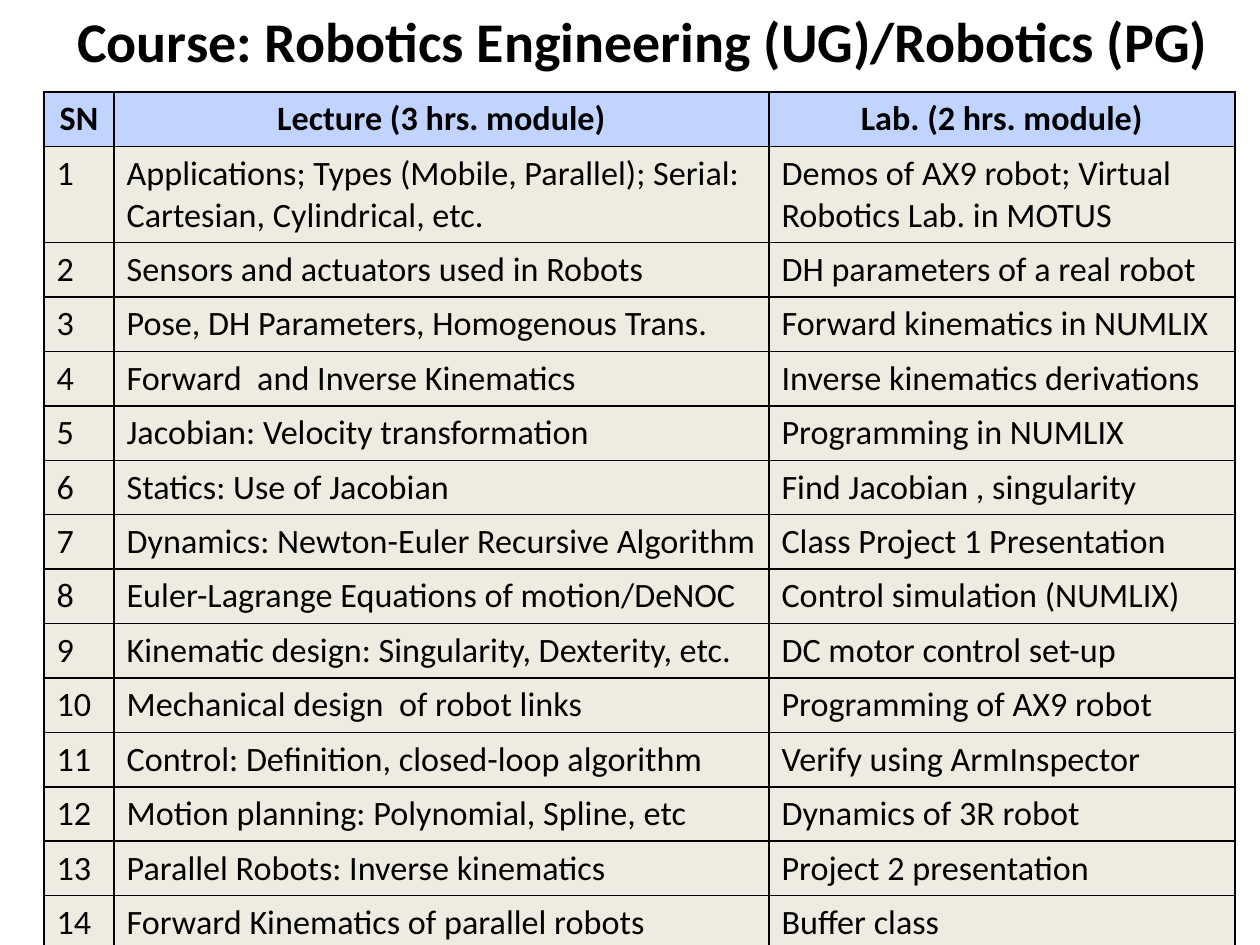
from dataclasses import dataclass

import lxml.etree
import pptx
import pptx.dml.color
import pptx.enum.text
import pptx.oxml.ns
import pptx.util

PX = pptx.util.Inches(1) / 126
PAGE_SIZE = (1260, 945)
TITLE_BOX = (35, 6, 1216, 69)
TABLE_BOX = (44, 92, 1191, 780)
COLUMN_WIDTHS = (70, 655, 466)


@dataclass(frozen=True)
class Theme:
    font: str = "Calibri"
    ink: str = "000000"
    header_fill: str = "C0D4FF"
    body_fill: str = "EEECE1"
    title_size: float = 32
    cell_size: float = 19.5
    border_width: float = 1


THEME = Theme()
CENTER = pptx.enum.text.PP_ALIGN.CENTER
LEFT = pptx.enum.text.PP_ALIGN.LEFT

TITLE = "Course: Robotics Engineering (UG)/Robotics (PG)"
HEADINGS = ("SN", "Lecture (3 hrs. module)", "Lab. (2 hrs. module)")
MODULES = (
    ("Applications; Types (Mobile, Parallel); Serial: Cartesian, Cylindrical, etc.",
     "Demos of AX9 robot; Virtual Robotics Lab. in MOTUS"),
    ("Sensors and actuators used in Robots", "DH parameters of a real robot"),
    ("Pose, DH Parameters, Homogenous Trans.", "Forward kinematics in NUMLIX"),
    ("Forward  and Inverse Kinematics", "Inverse kinematics derivations"),
    ("Jacobian: Velocity transformation", "Programming in NUMLIX"),
    ("Statics: Use of Jacobian", "Find Jacobian , singularity"),
    ("Dynamics: Newton-Euler Recursive Algorithm", "Class Project 1 Presentation"),
    ("Euler-Lagrange Equations of motion/DeNOC", "Control simulation (NUMLIX)"),
    ("Kinematic design: Singularity, Dexterity, etc.", "DC motor control set-up"),
    ("Mechanical design  of robot links", "Programming of AX9 robot"),
    ("Control: Definition, closed-loop algorithm", "Verify using ArmInspector"),
    ("Motion planning: Polynomial, Spline, etc", "Dynamics of 3R robot"),
    ("Parallel Robots: Inverse kinematics", "Project 2 presentation"),
    ("Forward Kinematics of parallel robots", "Buffer class"),
)


def emu(pixels):
    return pptx.util.Emu(round(pixels * PX))


def rgb(value):
    return pptx.dml.color.RGBColor.from_string(value)


def write_text(frame, text, size, bold, alignment):
    para = frame.paragraphs[0]
    para.alignment = alignment
    span = para.add_run()
    span.text = text
    formats = {"name": THEME.font, "size": pptx.util.Pt(size), "bold": bold}
    for name, value in formats.items():
        setattr(span.font, name, value)
    span.font.color.rgb = rgb(THEME.ink)


def add_borders(cell):
    """Line all four sides; must run before the fill, which follows in the XML."""
    qn = pptx.oxml.ns.qn
    properties = cell._tc.get_or_add_tcPr()
    width = str(pptx.util.Pt(THEME.border_width))
    for side in ("a:lnL", "a:lnR", "a:lnT", "a:lnB"):
        line = lxml.etree.SubElement(properties, qn(side), w=width)
        fill = lxml.etree.SubElement(line, qn("a:solidFill"))
        lxml.etree.SubElement(fill, qn("a:srgbClr"), val=THEME.ink)


def place_title(page, box):
    title = page.shapes.title
    for name, value in zip(("left", "top", "width", "height"), box):
        setattr(title, name, emu(value))
    frame = title.text_frame
    formats = {
        "word_wrap": True,
        "auto_size": pptx.enum.text.MSO_AUTO_SIZE.NONE,
        "vertical_anchor": pptx.enum.text.MSO_ANCHOR.MIDDLE,
    }
    for name, value in formats.items():
        setattr(frame, name, value)
    write_text(frame, TITLE, THEME.title_size, True, CENTER)


def place_schedule(page, box):
    lessons = [(str(number), *module) for number, module in enumerate(MODULES, 1)]
    rows = [HEADINGS, *lessons]
    table = page.shapes.add_table(len(rows), len(HEADINGS), *map(emu, box)).table
    for column, width in zip(table.columns, COLUMN_WIDTHS):
        column.width = emu(width)
    for row_index, texts in enumerate(rows):
        is_header = row_index == 0
        table.rows[row_index].height = emu(box[3] / len(rows))
        for column_index, text in enumerate(texts):
            cell = table.cell(row_index, column_index)
            add_borders(cell)
            cell.fill.solid()
            cell.fill.fore_color.rgb = rgb(
                THEME.header_fill if is_header else THEME.body_fill)
            write_text(cell.text_frame, text, THEME.cell_size, is_header,
                       CENTER if is_header else LEFT)


def main():
    deck = pptx.Presentation()
    deck.slide_width, deck.slide_height = map(emu, PAGE_SIZE)
    page = deck.slides.add_slide(deck.slide_layouts.get_by_name("Title Only"))
    place_schedule(page, TABLE_BOX)
    place_title(page, TITLE_BOX)
    deck.save("out.pptx")


if __name__ == "__main__":
    main()
